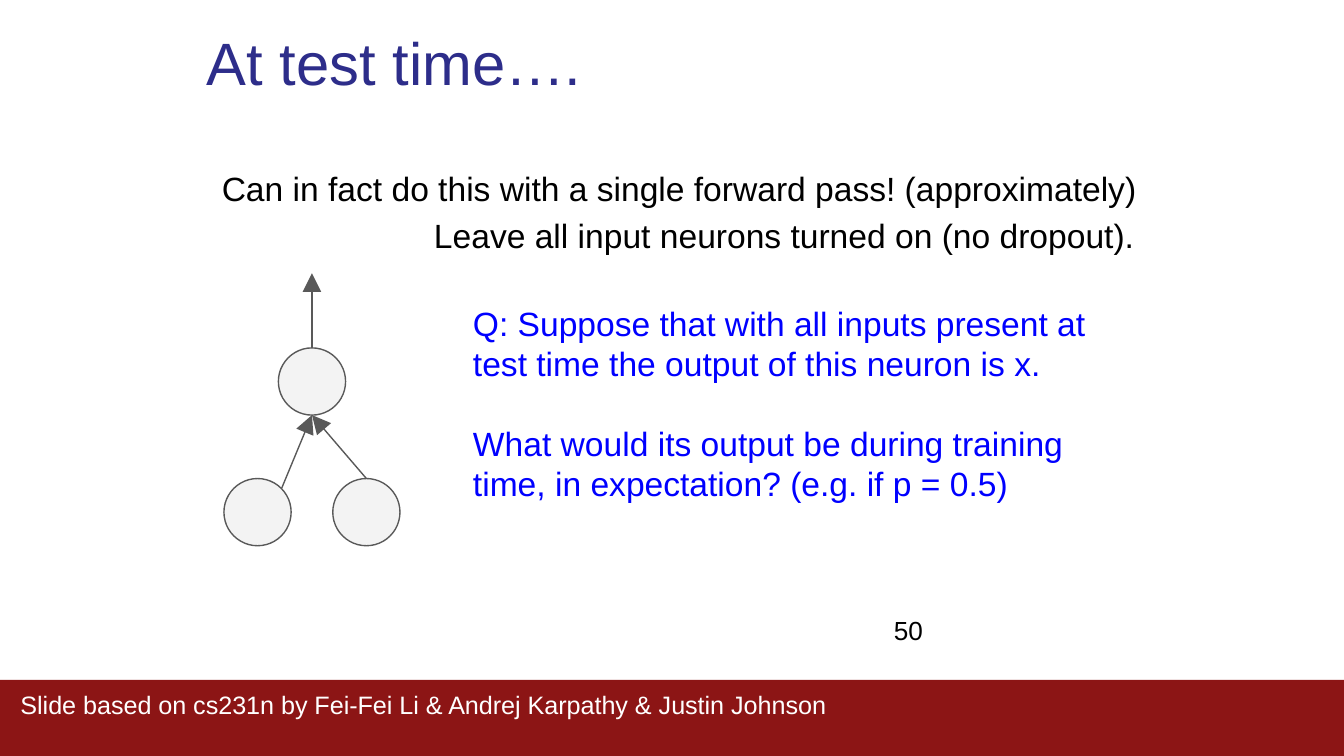
from lxml import etree
from pptx import Presentation
from pptx.dml.color import RGBColor
from pptx.enum.shapes import MSO_CONNECTOR, MSO_SHAPE
from pptx.enum.text import MSO_ANCHOR, MSO_AUTO_SIZE, PP_ALIGN
from pptx.oxml.ns import qn
from pptx.util import Pt

STRAIGHT = MSO_CONNECTOR.STRAIGHT
RECTANGLE, OVAL = MSO_SHAPE.RECTANGLE, MSO_SHAPE.OVAL
TOP, MIDDLE = MSO_ANCHOR.TOP, MSO_ANCHOR.MIDDLE
LEFT = PP_ALIGN.LEFT
NO_FIT = MSO_AUTO_SIZE.NONE

FONT = "Arial"
INSET = 5
COLORS = {
    "band": "8C1515",
    "footer": "FFFFFF",
    "title": "2D2D8A",
    "text": "000000",
    "question": "0000FF",
    "neuron": "F3F3F3",
    "outline": "595959",
}


def color(name):
    return RGBColor.from_string(COLORS[name])


def place(shape, left, top, width, height):
    shape.left, shape.top = Pt(left), Pt(top)
    shape.width, shape.height = Pt(width), Pt(height)


def write(shape, text, size, color_name, anchor=TOP):
    """Fill a text box or placeholder with evenly formatted paragraphs."""
    frame = shape.text_frame
    frame.text = text
    frame.word_wrap = True
    frame.auto_size = NO_FIT
    frame.vertical_anchor = anchor
    frame.margin_left = frame.margin_right = Pt(INSET)
    frame.margin_top = frame.margin_bottom = Pt(INSET)
    for paragraph in frame.paragraphs:
        paragraph.alignment = LEFT
        paragraph.space_before = Pt(0)
        for run in paragraph.runs:
            run.font.name = FONT
            run.font.size = Pt(size)
            run.font.color.rgb = color(color_name)


def add_text(slide, box, text, size, color_name, anchor=TOP):
    shape = slide.shapes.add_textbox(*map(Pt, box))
    write(shape, text, size, color_name, anchor)


def add_footer(slide, left, top, width, height):
    band = slide.shapes.add_shape(RECTANGLE, Pt(left), Pt(top), Pt(width), Pt(height))
    band.shadow.inherit = False
    band.fill.solid()
    band.fill.fore_color.rgb = color("band")
    band.line.fill.background()
    add_text(slide, (left + 6, top, width - 14, height),
             "Slide based on cs231n by Fei-Fei Li & Andrej Karpathy & Justin Johnson",
             13.5, "footer")


def add_title(slide, left, top, width, height):
    place(slide.shapes.title, left, top, width, height)
    write(slide.shapes.title, "At test time….", 32, "title")


def add_question(slide, left, top, width, height):
    body = slide.placeholders[1]
    place(body, left, top, width, height)
    write(body,
          "Q: Suppose that with all inputs present at test time the output of this neuron is x.\n"
          "What would its output be during training time, in expectation? (e.g. if p = 0.5)",
          18, "question", MIDDLE)
    body.text_frame.margin_bottom = Pt(14)
    line_height = Pt(21.5)
    for paragraph in body.text_frame.paragraphs:
        paragraph.line_spacing = line_height
        properties = paragraph._p.get_or_add_pPr()
        properties.set("marL", "0")
        properties.set("indent", "0")
        etree.SubElement(properties, qn("a:buNone"))
    body.text_frame.paragraphs[0].space_after = line_height


def add_neuron(slide, left, top, size):
    neuron = slide.shapes.add_shape(OVAL, Pt(left), Pt(top), Pt(size), Pt(size))
    neuron.shadow.inherit = False
    neuron.fill.solid()
    neuron.fill.fore_color.rgb = color("neuron")
    neuron.line.color.rgb = color("outline")
    neuron.line.width = Pt(0.75)


def add_arrow(slide, start, end):
    arrow = slide.shapes.add_connector(STRAIGHT, *map(Pt, (*start, *end)))
    arrow.line.color.rgb = color("outline")
    arrow.line.width = Pt(0.75)
    etree.SubElement(arrow.line._get_or_add_ln(), qn("a:tailEnd"),
                     type="triangle", w="lg", len="lg")
    etree.SubElement(arrow._element.spPr, qn("a:effectLst"))


def add_network(slide, left, top, width, height):
    """Draw two input neurons feeding one output neuron, whose arrow leaves at the top."""
    size = 36
    center = left + width / 2
    output_top = top + 40
    output_bottom = output_top + size
    input_top = top + height - size
    right = left + width - size
    add_neuron(slide, center - size / 2, output_top, size)
    for input_left in (left, right):
        add_neuron(slide, input_left, input_top, size)
    add_arrow(slide, (center, output_top), (center, top))
    add_arrow(slide, (left + 31, input_top + 5), (center, output_bottom))
    add_arrow(slide, (right + size / 2, input_top), (center, output_bottom))


def build_slide(presentation):
    slide = presentation.slides.add_slide(presentation.slide_layouts[1])
    add_footer(slide, 0, 364.3, 720, 42)
    add_text(slide, (473.8, 326.2, 32.4, 23), "50", 14, "text", MIDDLE)
    add_title(slide, 105.8, 8.6, 428.4, 36.7)
    add_text(slide, (113.8, 85, 512.6, 44),
             "Can in fact do this with a single forward pass! (approximately)", 18, "text")
    add_network(slide, 120, 146.4, 94.3, 146)
    add_text(slide, (227.5, 110.2, 389.5, 102),
             "Leave all input neurons turned on (no dropout).", 18, "text")
    add_question(slide, 248.4, 164.2, 365.8, 112.3)


def main():
    presentation = Presentation()
    presentation.slide_width, presentation.slide_height = Pt(720), Pt(405)
    build_slide(presentation)
    presentation.save("out.pptx")


if __name__ == "__main__":
    main()
